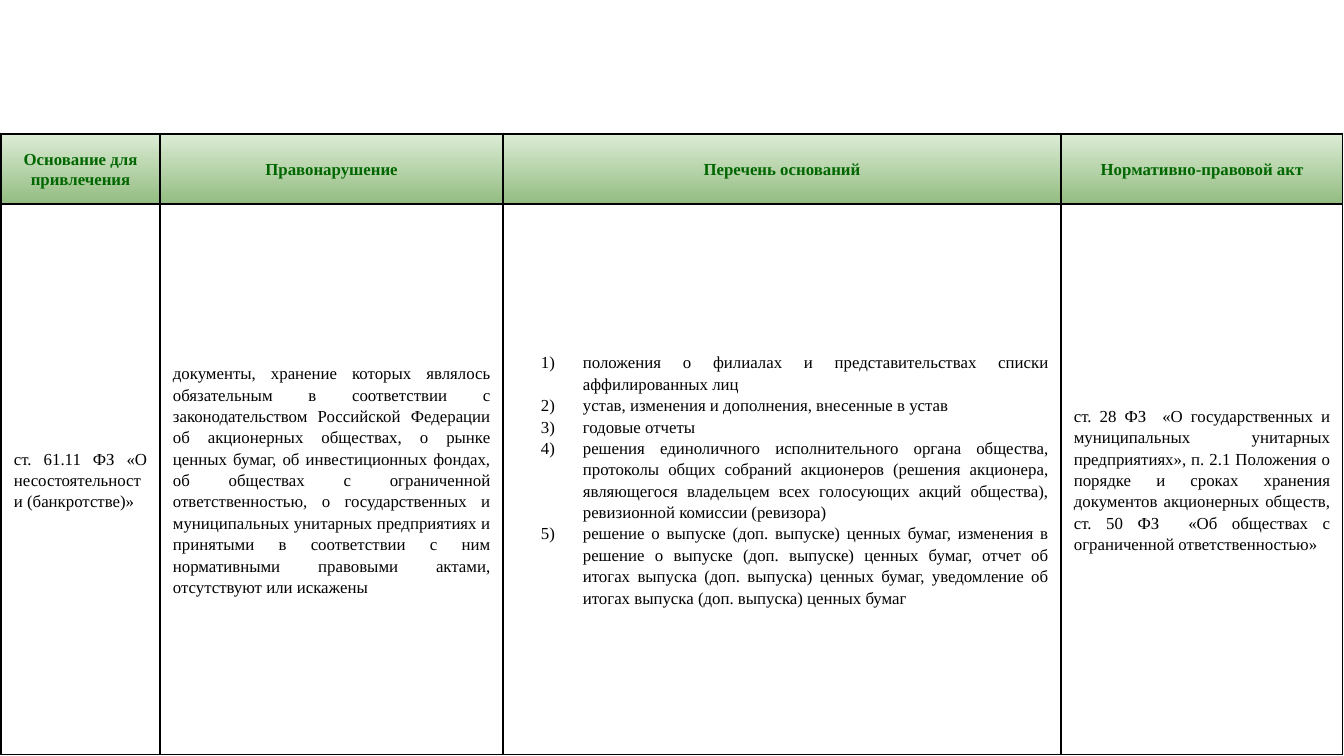
from lxml import etree
from pptx import Presentation
from pptx.dml.color import RGBColor
from pptx.enum.text import MSO_ANCHOR, PP_ALIGN
from pptx.oxml.ns import qn
from pptx.util import Emu, Pt

CENTER, JUSTIFY = PP_ALIGN.CENTER, PP_ALIGN.JUSTIFY
MIDDLE = MSO_ANCHOR.MIDDLE
FONT = "Times New Roman"
BLACK, GREEN = "000000", "006600"
HEADER_GRADIENT = ("DCECD5", "93BC81")
COLUMNS = (159, 343, 558, 282)
ROWS = (70, 551)
PADDING, INDENT, HANGING = 13, 67, 42

HEADERS = (
    "Основание для привлечения",
    "Правонарушение",
    "Перечень оснований",
    "Нормативно-правовой акт",
)
GROUNDS = (
    "положения о филиалах и представительствах списки аффилированных лиц",
    "устав, изменения и дополнения, внесенные в устав",
    "годовые отчеты",
    "решения единоличного исполнительного органа общества, протоколы общих "
    "собраний акционеров (решения акционера, являющегося владельцем всех "
    "голосующих акций общества), ревизионной комиссии (ревизора)",
    "решение о выпуске (доп. выпуске) ценных бумаг, изменения в решение о "
    "выпуске (доп. выпуске) ценных бумаг, отчет об итогах выпуска (доп. "
    "выпуска) ценных бумаг, уведомление об итогах выпуска (доп. выпуска) "
    "ценных бумаг",
)
BODY = (
    ("ст. 61.11 ФЗ «О несостоятельности (банкротстве)»",),
    ("документы, хранение которых являлось обязательным в соответствии с "
     "законодательством Российской Федерации об акционерных обществах, о рынке "
     "ценных бумаг, об инвестиционных фондах, об обществах с ограниченной "
     "ответственностью, о государственных и муниципальных унитарных "
     "предприятиях и принятыми в соответствии с ним нормативными правовыми "
     "актами, отсутствуют или искажены",),
    GROUNDS,
    ("ст. 28 ФЗ  «О государственных и муниципальных унитарных предприятиях», "
     "п. 2.1 Положения о порядке и сроках хранения документов акционерных "
     "обществ, ст. 50 ФЗ  «Об обществах с ограниченной ответственностью»",),
)


def px(n):
    """Convert pixels to EMU."""
    return Emu(round(n * 914400 / 134.4))


def rgb(value):
    """Turn a hex string into a colour."""
    return RGBColor.from_string(value)


def number_paragraph(p):
    """Give a paragraph a hanging indent and automatic numbering."""
    pPr = p._p.get_or_add_pPr()
    pPr.set("marL", str(px(INDENT)))
    pPr.set("indent", str(-px(HANGING)))
    color = etree.SubElement(pPr, qn("a:buClr"))
    etree.SubElement(color, qn("a:srgbClr"), val=BLACK)
    etree.SubElement(pPr, qn("a:buFont"), typeface=FONT)
    etree.SubElement(pPr, qn("a:buAutoNum"), type="arabicParenR")


def add_text(tf, texts, align=JUSTIFY, spacing=1.15, color=BLACK, bold=False, numbered=False):
    """Write the texts as paragraphs of a text frame."""
    for i, text in enumerate(texts):
        p = tf.add_paragraph() if i else tf.paragraphs[0]
        p.alignment, p.line_spacing = align, spacing
        if numbered:
            number_paragraph(p)
        r = p.add_run()
        r.text = text
        r.font.name, r.font.size, r.font.bold = FONT, Pt(9), bold
        r.font.color.rgb = rgb(color)


def format_cell(cell, gradient=None):
    """Set the padding, borders and fill of a cell."""
    cell.vertical_anchor = MIDDLE
    cell.margin_left = cell.margin_right = px(PADDING)
    cell.margin_top = cell.margin_bottom = px(PADDING)
    tcPr = cell._tc.get_or_add_tcPr()
    for side in ("lnL", "lnR", "lnT", "lnB"):
        ln = etree.SubElement(tcPr, qn(f"a:{side}"), w=str(Pt(0.75)))
        fill = etree.SubElement(ln, qn("a:solidFill"))
        etree.SubElement(fill, qn("a:srgbClr"), val=BLACK)
    if not gradient:
        cell.fill.background()
        return
    cell.fill.gradient()
    cell.fill.gradient_angle = 270
    for i, (stop, color) in enumerate(zip(cell.fill.gradient_stops, gradient)):
        stop.position = i
        stop.color.rgb = rgb(color)


def add_grounds_table(s, x, y, columns, rows):
    """Place the table of grounds for liability at x, y."""
    table = s.shapes.add_table(len(rows), len(columns), px(x), px(y),
                               px(sum(columns)), px(sum(rows))).table
    table.first_row = table.horz_banding = False
    for row, height in zip(table.rows, rows):
        row.height = px(height)
    for i, (width, header, texts) in enumerate(zip(columns, HEADERS, BODY)):
        table.columns[i].width = px(width)
        head, body = table.cell(0, i), table.cell(1, i)
        format_cell(head, HEADER_GRADIENT)
        add_text(head.text_frame, [header], align=CENTER, spacing=1.07, color=GREEN, bold=True)
        format_cell(body)
        add_text(body.text_frame, texts, numbered=len(texts) > 1)


def main():
    """Build and save the slide."""
    prs = Presentation()
    prs.slide_width, prs.slide_height = px(1344), px(756)
    s = prs.slides.add_slide(prs.slide_layouts[6])
    add_grounds_table(s, 1, 134, COLUMNS, ROWS)
    prs.save("out.pptx")


if __name__ == "__main__":
    main()
